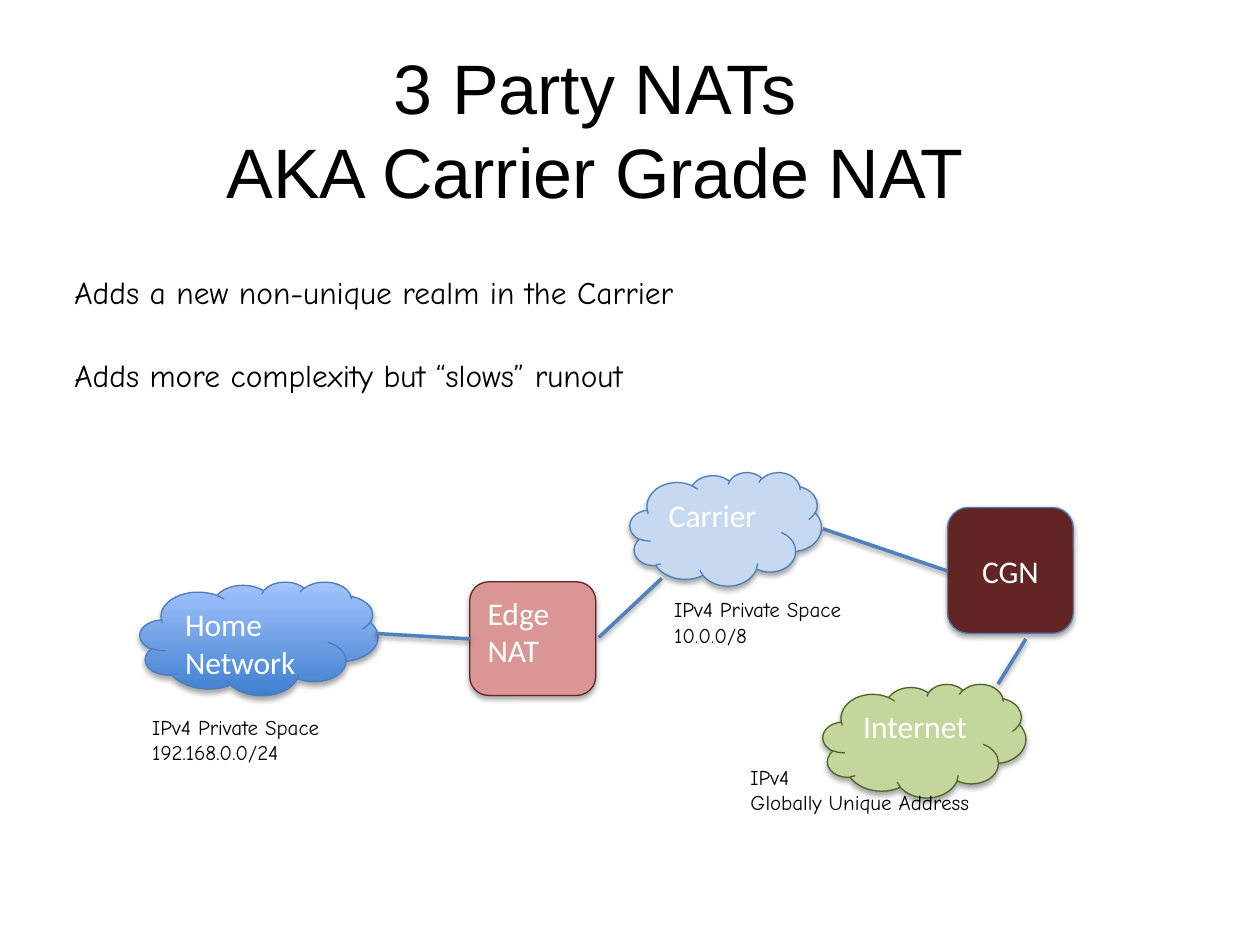
import dataclasses

import pptx
import pptx.dml.color
import pptx.enum.shapes
import pptx.enum.text
import pptx.oxml
import pptx.oxml.ns
import pptx.util

Cm = pptx.util.Cm
Pt = pptx.util.Pt
RGB = pptx.dml.color.RGBColor.from_string
MSO_SHAPE = pptx.enum.shapes.MSO_SHAPE
PP_ALIGN = pptx.enum.text.PP_ALIGN
MSO_ANCHOR = pptx.enum.text.MSO_ANCHOR
MSO_AUTO_SIZE = pptx.enum.text.MSO_AUTO_SIZE


@dataclasses.dataclass(frozen=True)
class Theme:
    title_font: str = "Arial"
    note_font: str = "Comic Neue"
    node_font: str = "Calibri"
    title_size: int = 40
    body_size: int = 18
    label_size: int = 12
    ink: str = "000000"
    paper: str = "FFFFFF"
    link: str = "4F81BD"
    outline: str = "4B7EBC"
    maroon: str = "632523"
    rose: str = "D99694"
    sky: str = "C6D9F1"
    leaf: str = "C3D69B"
    olive: str = "4F6228"
    home: tuple = ("3F80CE", "A4C4FF")  # bottom, top


THEME = Theme()


def format_text(tf, font, size, color, align=PP_ALIGN.LEFT):
    for p in tf.paragraphs:
        p.alignment = align
        for r in p.runs:
            r.font.name = font
            r.font.size = Pt(size)
            r.font.color.rgb = RGB(color)


def place(sp, box):
    sp.left, sp.top, sp.width, sp.height = (Cm(v) for v in box)


def add_shadow(sp, alpha, dist):
    """Soft shadow straight below; call after fill and line are set."""
    sp_pr = sp._element.spPr
    sp_pr.append(pptx.oxml.parse_xml(
        f'<a:effectLst {pptx.oxml.ns.nsdecls("a")}>'
        f'<a:outerShdw blurRad="{Pt(3.1)}" dist="{Pt(dist)}" dir="5400000" rotWithShape="0">'
        f'<a:srgbClr val="{THEME.ink}"><a:alpha val="{alpha * 1000}"/></a:srgbClr>'
        '</a:outerShdw></a:effectLst>'))


def add_title(s, box):
    sp = s.shapes.title
    place(sp, box)
    tf = sp.text_frame
    tf.text = "3 Party NATs\nAKA Carrier Grade NAT"
    tf.auto_size = MSO_AUTO_SIZE.NONE
    tf.vertical_anchor = MSO_ANCHOR.TOP
    tf.margin_top = Cm(0.2)
    format_text(tf, THEME.title_font, THEME.title_size, THEME.ink, PP_ALIGN.CENTER)
    for p in tf.paragraphs:
        p.line_spacing = Pt(48)


def add_body(s, box):
    sp = s.placeholders[1]
    place(sp, box)
    tf = sp.text_frame
    tf.text = ("Adds a new non-unique realm in the Carrier\n"
               "Adds more complexity but “slows” runout")
    tf.auto_size = MSO_AUTO_SIZE.NONE
    tf.margin_left = tf.margin_right = tf.margin_top = tf.margin_bottom = 0
    format_text(tf, THEME.note_font, THEME.body_size, THEME.ink)
    for p in tf.paragraphs:
        p.space_before, p.space_after = Pt(0), Pt(25.5)
        # Plain indented text without bullets
        p_pr = p._p.get_or_add_pPr()
        p_pr.set("marL", str(Cm(0.23)))
        p_pr.set("indent", "0")
        p_pr.append(pptx.oxml.parse_xml(f'<a:buNone {pptx.oxml.ns.nsdecls("a")}/>'))


def add_node(s, kind, box, text, fill, line, centred=False):
    sp = s.shapes.add_shape(kind, *(Cm(v) for v in box))
    if isinstance(fill, tuple):
        sp.fill.gradient()
        sp.fill.gradient_angle = 90
        for stop, position, color in zip(sp.fill.gradient_stops, (0, 1), fill):
            stop.position = position
            stop.color.rgb = RGB(color)
    else:
        sp.fill.solid()
        sp.fill.fore_color.rgb = RGB(fill)
    sp.line.color.rgb = RGB(line)
    sp.line.width = Pt(0.75)
    add_shadow(sp, 35, 1.8)
    tf = sp.text_frame
    tf.text = text
    tf.word_wrap = True
    tf.vertical_anchor = MSO_ANCHOR.MIDDLE if centred else MSO_ANCHOR.TOP
    format_text(tf, THEME.node_font, THEME.body_size, THEME.paper,
                PP_ALIGN.CENTER if centred else PP_ALIGN.LEFT)


def add_link(s, x1, y1, x2, y2):
    cxn = s.shapes.add_connector(pptx.enum.shapes.MSO_CONNECTOR.STRAIGHT,
                                 Cm(x1), Cm(y1), Cm(x2), Cm(y2))
    cxn.line.color.rgb = RGB(THEME.link)
    cxn.line.width = Pt(2)
    add_shadow(cxn, 38, 1.6)


def add_label(s, box, text):
    tf = s.shapes.add_textbox(*(Cm(v) for v in box)).text_frame
    tf.text = text
    tf.word_wrap = False
    tf.auto_size = MSO_AUTO_SIZE.SHAPE_TO_FIT_TEXT
    format_text(tf, THEME.note_font, THEME.label_size, THEME.ink)


def add_network(s, left, top):
    """Path from the home network through both NATs to the Internet."""
    t, cloud, gate = THEME, MSO_SHAPE.CLOUD, MSO_SHAPE.ROUNDED_RECTANGLE
    node_h, label_h = 2.29, 1.27

    # Realms (clouds) and translators (rounded boxes)
    for kind, x, y, w, h, text, fill, line, centred in (
        (cloud, 0, 2.21, 4.8, node_h, "Home Network", t.home, t.outline, False),
        (gate, 6.65, 2.21, 2.54, node_h, "Edge NAT", t.rose, t.maroon, False),
        (cloud, 13.77, 4.27, 4.09, node_h, "Internet", t.leaf, t.olive, False),
        (cloud, 9.88, 0, 3.86, node_h, "Carrier", t.sky, t.outline, False),
        (gate, 16.28, 0.71, 2.54, 2.54, "CGN", t.maroon, t.outline, True),
    ):
        add_node(s, kind, (left + x, top + y, w, h), text, fill, line, centred)

    # Links between neighbours
    for x1, y1, x2, y2 in (
        (4.75, 3.25, 6.65, 3.36),
        (9.25, 3.33, 10.52, 2.14),
        (13.77, 1.14, 16.28, 1.99),
        (17.86, 3.36, 17.3, 4.27),
    ):
        add_link(s, left + x1, top + y1, left + x2, top + y2)

    # Address space of each realm
    for x, y, w, text in (
        (0, 4.75, 4.75, "IPv4 Private Space\n192.168.0.0/24"),
        (12.06, 5.77, 5.87, "IPv4\nGlobally Unique Address"),
        (10.52, 2.39, 4.75, "IPv4 Private Space\n10.0.0/8"),
    ):
        add_label(s, (left + x, top + y, w, label_h), text)


def main():
    prs = pptx.Presentation()
    prs.slide_width, prs.slide_height = Cm(25.4), Cm(19.05)
    s = prs.slides.add_slide(prs.slide_layouts[1])
    add_title(s, (1.52, 0.69, 20.96, 3.18))
    add_body(s, (1.27, 5.51, 23.06, 3.81))
    add_network(s, 2.82, 9.52)
    prs.save("out.pptx")


if __name__ == "__main__":
    main()
